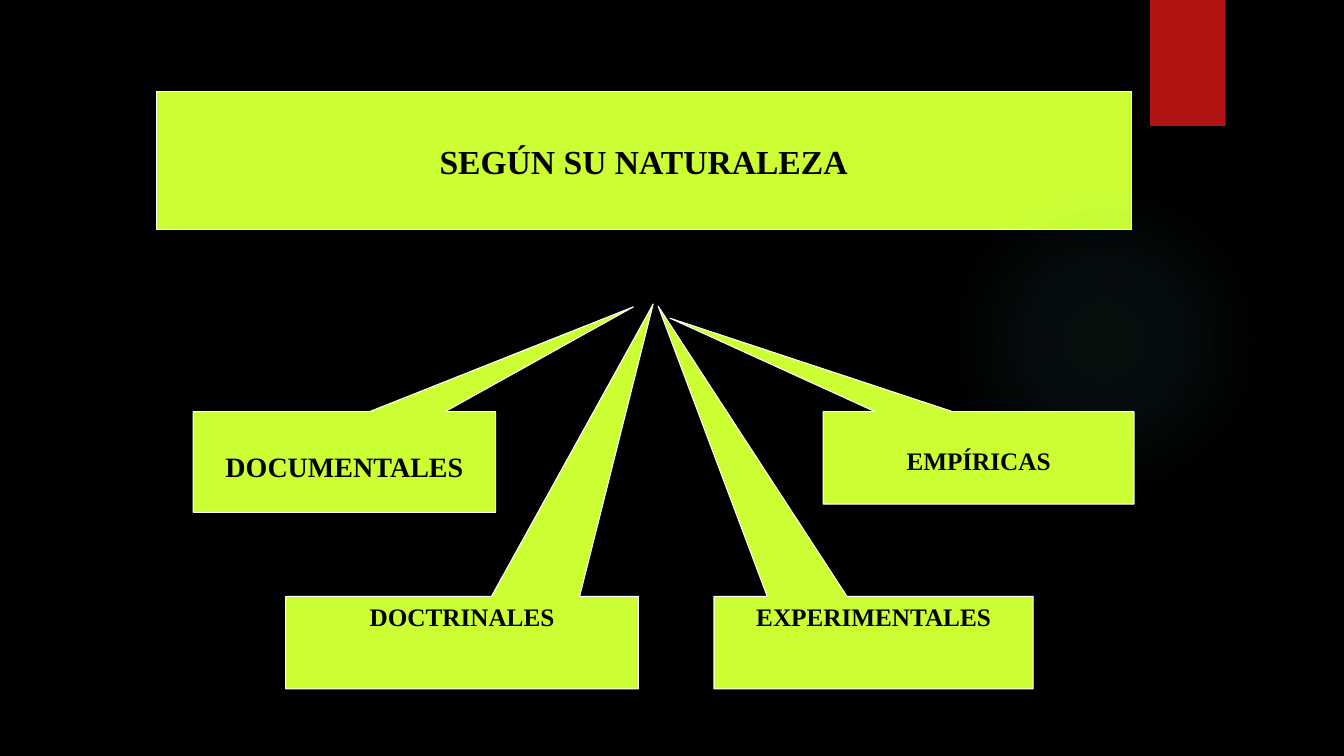
"""Build a slide that splits a classification into four callouts."""
from dataclasses import dataclass

from lxml import etree
from pptx import Presentation
from pptx.dml.color import RGBColor
from pptx.enum.shapes import MSO_SHAPE as SHAPE
from pptx.enum.text import MSO_ANCHOR as ANCHOR, MSO_AUTO_SIZE as AUTO, PP_ALIGN as ALIGN
from pptx.oxml import parse_xml
from pptx.oxml.ns import nsdecls, qn
from pptx.util import Pt


@dataclass(frozen=True)
class Theme:
    """Colours, font and type sizes of the slide."""
    back: str = "000000"
    box: str = "CCFF33"
    edge: str = "FFFFFF"
    ink: str = "000000"
    panel: str = "B01513"
    glow: str = "50B9C1"
    font: str = "Times New Roman"
    title: int = 24
    large: int = 20
    small: int = 18


T = Theme()
CALLOUTS = [
    ("DOCUMENTALES", (138, 294, 216, 72), (-0.956, 1.54), T.large, 27),
    ("DOCTRINALES", (204, 426, 252, 66), (-0.542, 3.665), T.small, 3.6),
    ("EXPERIMENTALES", (510, 426, 228, 66), (0.675, 3.642), T.small, 3.6),
    ("EMPÍRICAS", (588, 294, 222, 66), (0.993, 1.512), T.small, 24.3),
]


def rgb(value):
    """Turn a hex string into a colour."""
    return RGBColor.from_string(value)


def paint(sp, fill, line=None):
    """Give a shape a solid fill and a thin line, or no line."""
    sp.fill.solid()
    sp.fill.fore_color.rgb = rgb(fill)
    if line:
        sp.line.color.rgb = rgb(line)
        sp.line.width = Pt(0.75)
    else:
        sp.line.fill.background()


def write(tf, text, size, anchor):
    """Write one bold centred line into a text frame."""
    tf.auto_size = AUTO.NONE
    tf.vertical_anchor = anchor
    p = tf.paragraphs[0]
    p.text = text
    p.alignment = ALIGN.CENTER
    p.font.name, p.font.size, p.font.bold = T.font, Pt(size), True
    p.font.color.rgb = rgb(T.ink)


def add_shape(s, kind, box):
    """Add a preset shape without a shadow."""
    sp = s.shapes.add_shape(kind, *map(Pt, box))
    sp.shadow.inherit = False
    return sp


def add_glow(s, box):
    """Add a faint round glow that fades outwards."""
    sp = add_shape(s, SHAPE.OVAL, box)
    paint(sp, T.glow)
    stops = "".join(
        f'<a:gs pos="{pos}000"><a:srgbClr val="{T.glow}"><a:alpha val="{alpha}000"/></a:srgbClr></a:gs>'
        for pos, alpha in ((0, 7), (36, 6), (69, 0), (100, 0)))
    grad = parse_xml(
        f'<a:gradFill {nsdecls("a")}><a:gsLst>{stops}</a:gsLst><a:path path="circle">'
        '<a:fillToRect l="50000" t="50000" r="50000" b="50000"/></a:path></a:gradFill>')
    spPr = sp.element.spPr
    spPr.replace(spPr.find(qn("a:solidFill")), grad)


def set_title(s, text, box, adjustments):
    """Shape the title placeholder as a down arrow callout."""
    title = s.shapes.title
    title.left, title.top, title.width, title.height = map(Pt, box)
    geom = etree.SubElement(title.element.spPr, qn("a:prstGeom"), prst="downArrowCallout")
    guides = etree.SubElement(geom, qn("a:avLst"))
    for i, value in enumerate(adjustments, 1):
        etree.SubElement(guides, qn("a:gd"), name=f"adj{i}", fmla=f"val {round(value * 100000)}")
    paint(title, T.box, T.edge)
    write(title.text_frame, text, T.title, ANCHOR.MIDDLE)
    title.text_frame.word_wrap = False


def add_callout(s, text, box, tip, size, inset):
    """Add an upside-down callout whose text stays upright."""
    sp = add_shape(s, SHAPE.RECTANGULAR_CALLOUT, box)
    sp.rotation = 180
    for i, value in enumerate(tip):
        sp.adjustments[i] = value
    paint(sp, T.box, T.edge)
    tf = sp.text_frame
    write(tf, text, size, ANCHOR.TOP)
    tf.margin_top = Pt(inset)
    tf.word_wrap = True
    sp.element.txBody.find(qn("a:bodyPr")).set("rot", "10800000")


def main():
    """Build and save the slide."""
    prs = Presentation()
    prs.slide_width, prs.slide_height = Pt(960), Pt(540)
    s = prs.slides.add_slide(prs.slide_layouts[5])
    s.background.fill.solid()
    s.background.fill.fore_color.rgb = rgb(T.back)
    add_glow(s, (677.5, 131.8, 221.8, 221.8))
    paint(add_shape(s, SHAPE.RECTANGLE, (821.5, 0, 54, 90)), T.panel)
    set_title(s, "SEGÚN SU NATURALEZA", (111.5, 65.5, 696.5, 98.5), (2.636, 2.636, 0.167, 0.667))
    for callout in CALLOUTS:
        add_callout(s, *callout)
    prs.save("out.pptx")


if __name__ == "__main__":
    main()
